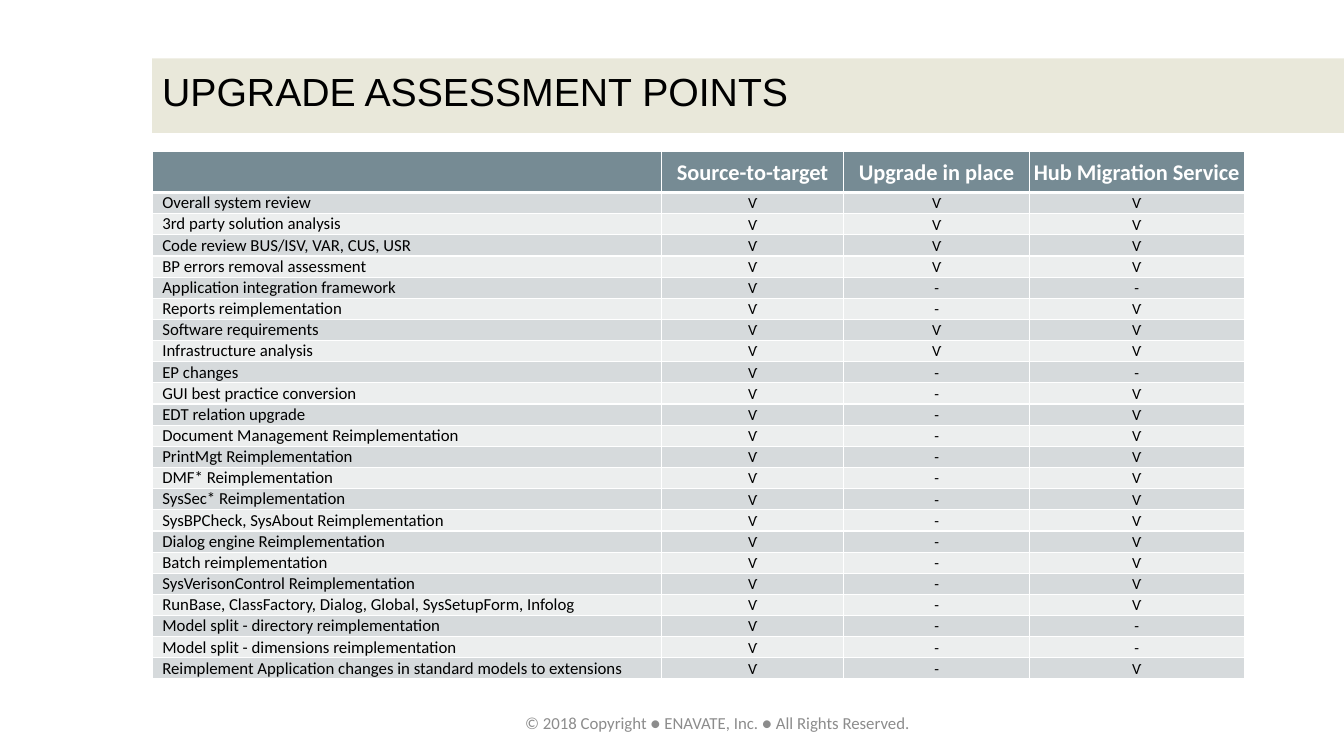
from lxml import etree
from pptx import Presentation
from pptx.dml.color import RGBColor
from pptx.enum.shapes import MSO_SHAPE
from pptx.enum.text import MSO_ANCHOR, MSO_AUTO_SIZE, PP_ALIGN
from pptx.oxml.ns import qn
from pptx.util import Inches, Pt

RECTANGLE = MSO_SHAPE.RECTANGLE
MIDDLE = MSO_ANCHOR.MIDDLE
LEFT, CENTER = PP_ALIGN.LEFT, PP_ALIGN.CENTER
FIT_SHAPE = MSO_AUTO_SIZE.SHAPE_TO_FIT_TEXT

WHITE, BLACK, GREY = "FFFFFF", "000000", "8C8C8C"
SAND, SLATE = "E1DFCB", "768B94"
BANDS = ("D6DADC", "ECEEEE")

COLUMN_WIDTHS = (5.05, 1.81, 1.84, 2.13)
HEADER_HEIGHT, ROW_HEIGHT = 0.41, 0.21
HEADERS = ("", "Source-to-target", "Upgrade in place", "Hub Migration Service")
# Each point has one mark per upgrade method
POINTS = (
    ("Overall system review", "ѴѴѴ"),
    ("3rd party solution analysis", "ѴѴѴ"),
    ("Code review BUS/ISV, VAR, CUS, USR", "ѴѴѴ"),
    ("BP errors removal assessment", "ѴѴѴ"),
    ("Application integration framework", "Ѵ--"),
    ("Reports reimplementation", "Ѵ-Ѵ"),
    ("Software requirements", "ѴѴѴ"),
    ("Infrastructure analysis", "ѴѴѴ"),
    ("EP changes", "Ѵ--"),
    ("GUI best practice conversion", "Ѵ-Ѵ"),
    ("EDT relation upgrade", "Ѵ-Ѵ"),
    ("Document Management Reimplementation", "Ѵ-Ѵ"),
    ("PrintMgt Reimplementation", "Ѵ-Ѵ"),
    ("DMF* Reimplementation", "Ѵ-Ѵ"),
    ("SysSec* Reimplementation", "Ѵ-Ѵ"),
    ("SysBPCheck, SysAbout Reimplementation", "Ѵ-Ѵ"),
    ("Dialog engine Reimplementation", "Ѵ-Ѵ"),
    ("Batch reimplementation", "Ѵ-Ѵ"),
    ("SysVerisonControl Reimplementation", "Ѵ-Ѵ"),
    ("RunBase, ClassFactory, Dialog, Global, SysSetupForm, Infolog", "Ѵ-Ѵ"),
    ("Model split - directory reimplementation", "Ѵ--"),
    ("Model split - dimensions reimplementation", "Ѵ--"),
    ("Reimplement Application changes in standard models to extensions", "Ѵ-Ѵ"),
)


def color(hex_value):
    return RGBColor.from_string(hex_value)


def add_span(para, text, size, hex_value, font="Calibri", bold=False):
    span = para.add_run()
    span.text = text
    span.font.name = font
    span.font.size = Pt(size)
    span.font.bold = bold
    span.font.color.rgb = color(hex_value)


def add_title(page, left, top, width, height):
    # Translucent band behind the title
    band = page.shapes.add_shape(RECTANGLE, left, top, width, height)
    band.shadow.inherit = False
    band.line.fill.background()
    band.fill.solid()
    band.fill.fore_color.rgb = color(SAND)
    tint = band.fill._xPr.find(qn("a:solidFill"))[0]
    etree.SubElement(tint, qn("a:alpha"), val="70000")

    # Title text
    box = page.shapes.add_textbox(left, top - Inches(0.02), width, height)
    frame = box.text_frame
    frame.word_wrap = True
    frame.vertical_anchor = MIDDLE
    para = frame.paragraphs[0]
    para.line_spacing = 0.9
    add_span(para, "UPGRADE ASSESSMENT POINTS", 28, BLACK, font="Arial")


def set_borders(cell, top=1, bottom=1):
    widths = {"a:lnL": 1, "a:lnR": 1, "a:lnT": top, "a:lnB": bottom}
    properties = cell._tc.get_or_add_tcPr()
    for tag, width in widths.items():
        line = etree.SubElement(properties, qn(tag), w=str(Pt(width)))
        fill = etree.SubElement(line, qn("a:solidFill"))
        etree.SubElement(fill, qn("a:srgbClr"), val=WHITE)


def fill_cell(cell, text, row, column):
    is_header, is_label = row == 0, column == 0
    set_borders(cell, top=3 if row == 1 else 1, bottom=3 if is_header else 1)
    cell.fill.solid()
    cell.fill.fore_color.rgb = color(SLATE if is_header else BANDS[(row - 1) % 2])
    cell.vertical_anchor = MIDDLE
    cell.margin_left = cell.margin_right = Inches(0.1 if is_label else 0.01)
    cell.margin_top = Inches(0 if is_label else 0.01)
    cell.margin_bottom = 0
    para = cell.text_frame.paragraphs[0]
    para.alignment = LEFT if is_label else CENTER
    if not text:
        return
    if is_header:
        add_span(para, text, 16, WHITE, bold=True)
    else:
        add_span(para, text, 12 if is_label else 11, BLACK)


def add_assessment_table(page, left, top, width, height):
    rows = [HEADERS] + [(point, *marks) for point, marks in POINTS]
    frame = page.shapes.add_table(len(rows), len(HEADERS), left, top, width, height)
    table = frame.table
    table.horz_banding = False
    for column, column_width in zip(table.columns, COLUMN_WIDTHS):
        column.width = Inches(column_width)
    for row, values in enumerate(rows):
        table.rows[row].height = Inches(ROW_HEIGHT if row else HEADER_HEIGHT)
        for column, text in enumerate(values):
            fill_cell(table.cell(row, column), text, row, column)


def add_footer(page, left, top, width, height):
    box = page.shapes.add_textbox(left, top, width, height)
    frame = box.text_frame
    frame.word_wrap = False
    frame.auto_size = FIT_SHAPE
    text = "© 2018 Copyright ● ENAVATE, Inc. ● All Rights Reserved."
    add_span(frame.paragraphs[0], text, 12, GREY)


def main():
    deck = Presentation()
    deck.slide_width, deck.slide_height = Inches(13.33), Inches(7.5)
    page = deck.slides.add_slide(deck.slide_layouts[6])
    left = Inches(1.51)
    add_title(page, left, Inches(0.58), deck.slide_width - left, Inches(0.74))
    add_assessment_table(page, left, Inches(1.5), Inches(10.83), Inches(5.24))
    add_footer(page, Inches(5.11), Inches(7.02), Inches(4.06), Inches(0.3))
    deck.save("out.pptx")


if __name__ == "__main__":
    main()
